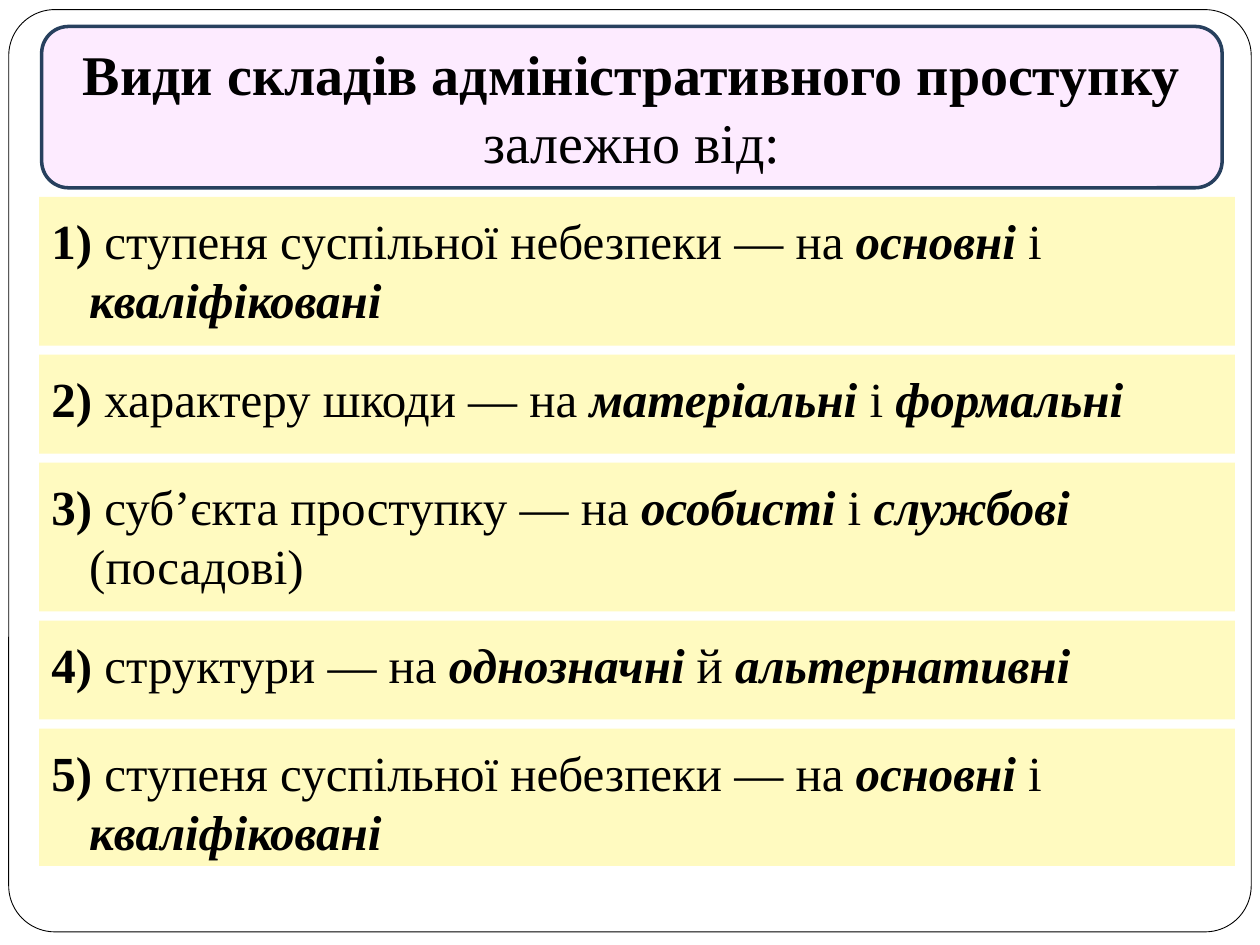
"""Build the slide on the kinds of administrative offence composition."""
from pptx import Presentation
from pptx.dml.color import RGBColor
from pptx.enum import shapes, text
from pptx.util import Pt

COLORS = {"white": "FFFFFF", "black": "000000", "pink": "FDEBFF", "navy": "27405E", "yellow": "FFFAC0"}
FONT = "Times New Roman"
TITLE = [("Види складів адміністративного проступку", True), ("залежно від:", False)]
CRITERIA = [
    ("ступеня суспільної небезпеки", "основні", "і", "кваліфіковані", "", 85),
    ("характеру шкоди", "матеріальні", "і", "формальні", "", 56.5),
    ("суб’єкта проступку", "особисті", "і", "службові", " (посадові)", 85),
    ("структури", "однозначні", "й", "альтернативні", "", 56.5),
    ("ступеня суспільної небезпеки", "основні", "і", "кваліфіковані", "", 78.5),
]
FRAME_BOX = (5, 5.5, 710, 527)
TITLE_BOX = (23.8, 15.1, 674.6, 92.2)
LEFT, TOP, WIDTH, GAP = 22.3, 112.5, 683.3, 5.2


def color(name):
    return RGBColor.from_string(COLORS[name])


def add_box(slide, kind, box, fill, line=None, line_width=0):
    shape = slide.shapes.add_shape(kind, *map(Pt, box))
    shape.shadow.inherit = False
    shape.fill.solid()
    shape.fill.fore_color.rgb = color(fill)
    if line:
        shape.line.color.rgb = color(line)
        shape.line.width = Pt(line_width)
    else:
        shape.line.fill.background()
    return shape


def style(paragraph, size, alignment):
    paragraph.alignment = alignment
    paragraph.font.name = FONT
    paragraph.font.size = Pt(size)
    paragraph.font.color.rgb = color("black")


def add_title(slide):
    add_box(slide, shapes.MSO_SHAPE.ROUNDED_RECTANGLE, TITLE_BOX, "pink", "navy", 2)
    title = slide.shapes.title
    slide.shapes.element.append(title.element)
    title.left, title.top, title.width, title.height = map(Pt, TITLE_BOX)
    frame = title.text_frame
    frame.auto_size = text.MSO_AUTO_SIZE.NONE
    frame.vertical_anchor = text.MSO_ANCHOR.MIDDLE
    frame.text = "\n".join(line for line, bold in TITLE)
    for paragraph, (line, bold) in zip(frame.paragraphs, TITLE):
        style(paragraph, 32, text.PP_ALIGN.CENTER)
        paragraph.font.bold = bold
        paragraph.space_before = Pt(0)


def add_criterion(slide, number, criterion, top):
    basis, first, conjunction, second, ending, height = criterion
    shape = add_box(slide, shapes.MSO_SHAPE.RECTANGLE, (LEFT, top, WIDTH, height), "yellow")
    frame = shape.text_frame
    frame.word_wrap = True
    frame.vertical_anchor = text.MSO_ANCHOR.TOP
    frame.margin_top = Pt(8)
    paragraph = frame.paragraphs[0]
    style(paragraph, 28, text.PP_ALIGN.LEFT)
    properties = paragraph._p.get_or_add_pPr()
    properties.set("marL", str(Pt(21.6)))
    properties.set("indent", str(Pt(-21.6)))
    pieces = [
        (f"{number})", True, False),
        (f" {basis} — на ", False, False),
        (first, True, True),
        (f" {conjunction} ", False, False),
        (second, True, True),
        (ending, False, False),
    ]
    for words, bold, italic in pieces:
        if words:
            run = paragraph.add_run()
            run.text = words
            run.font.bold, run.font.italic = bold, italic


def main():
    presentation = Presentation()
    presentation.slide_width, presentation.slide_height = Pt(720), Pt(540)
    slide = presentation.slides.add_slide(presentation.slide_layouts[5])
    border = add_box(slide, shapes.MSO_SHAPE.ROUNDED_RECTANGLE, FRAME_BOX, "white", "black", 0.5)
    border.adjustments[0] = 0.05
    add_title(slide)
    top = TOP
    for number, criterion in enumerate(CRITERIA, 1):
        add_criterion(slide, number, criterion, top)
        top += criterion[-1] + GAP
    presentation.save("out.pptx")


if __name__ == "__main__":
    main()
